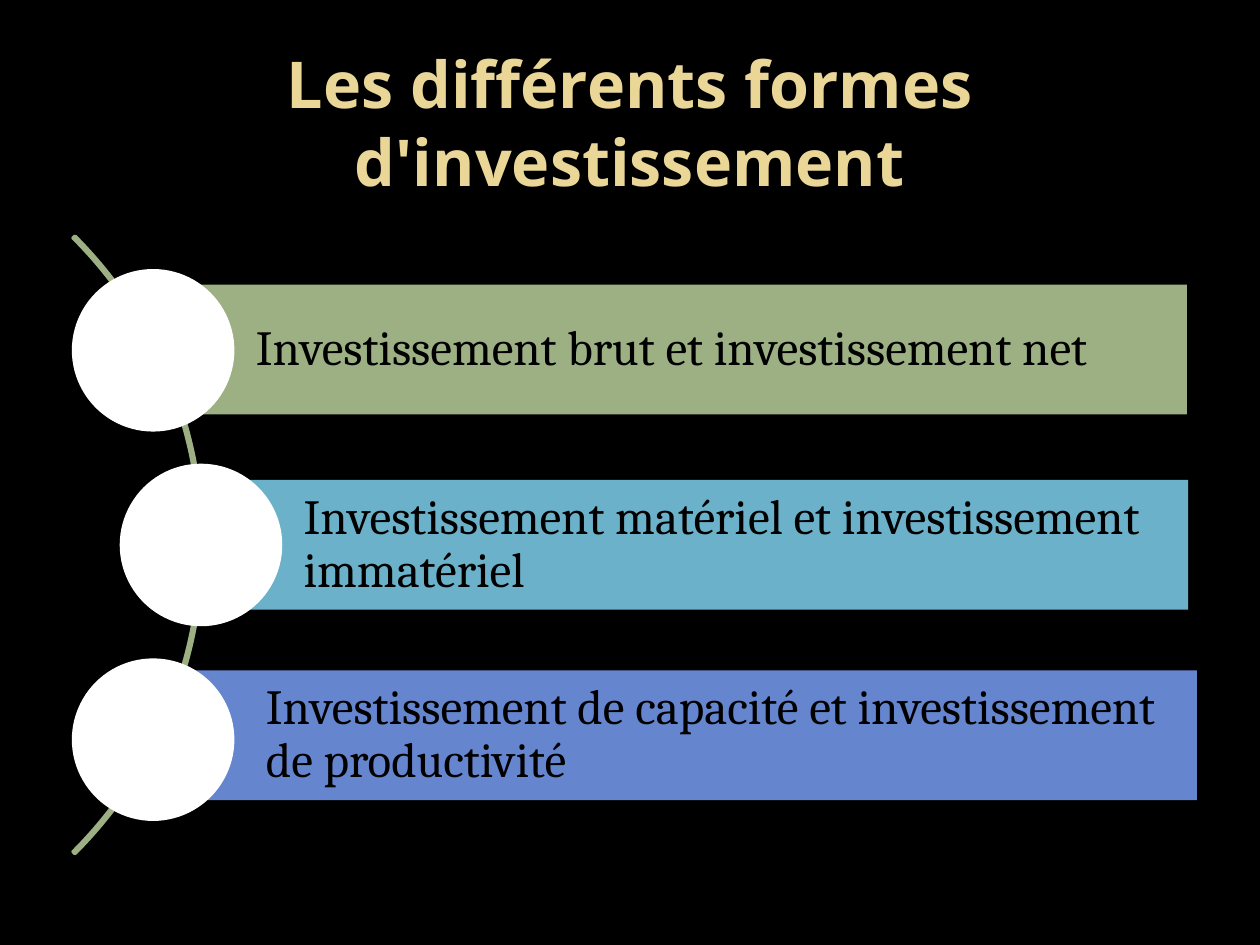
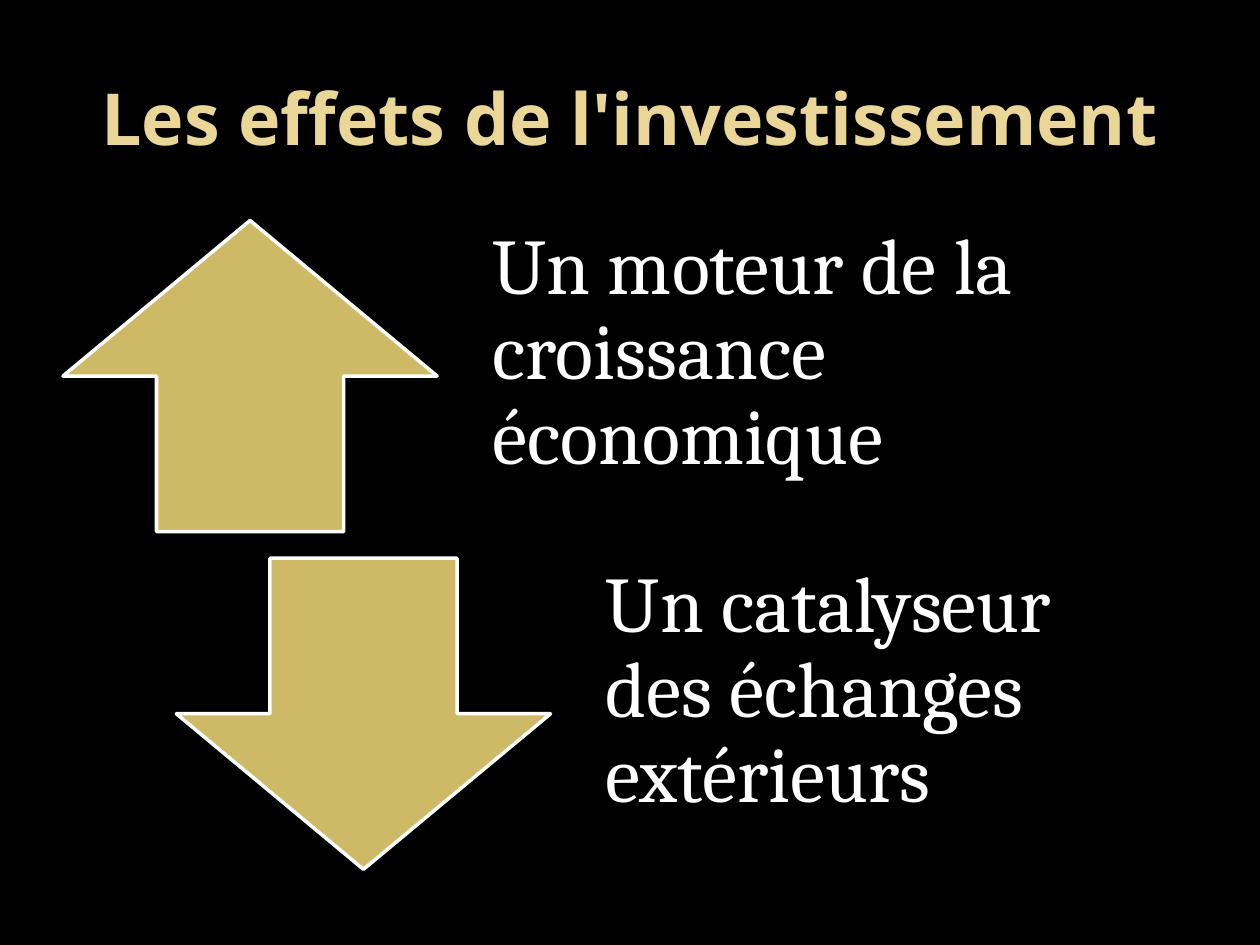
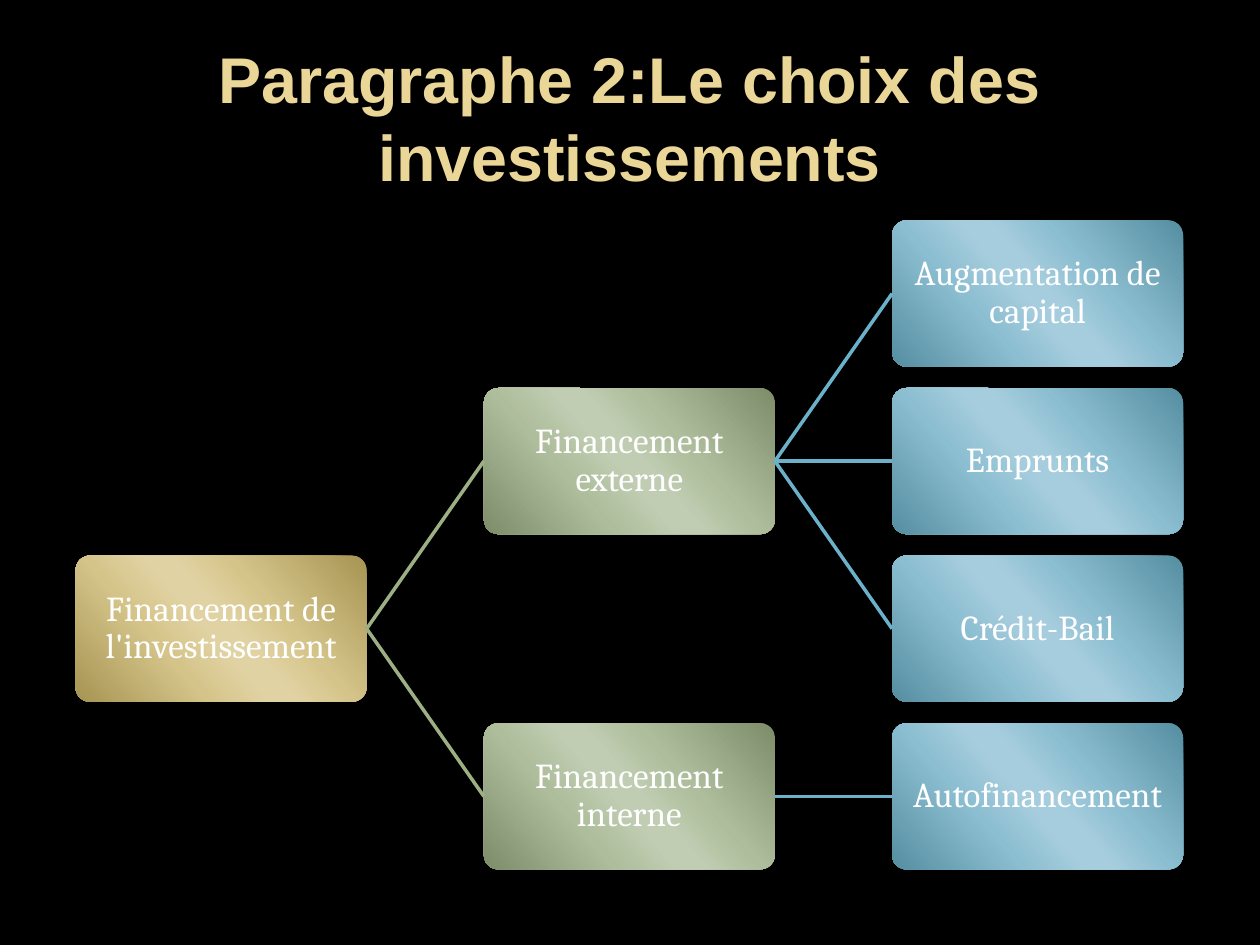
from pptx import Presentation
from pptx.dml.color import RGBColor
from pptx.enum.shapes import MSO_CONNECTOR, MSO_SHAPE
from pptx.enum.text import MSO_ANCHOR, PP_ALIGN
from pptx.oxml import parse_xml
from pptx.oxml.ns import nsdecls
from pptx.util import Inches, Pt

WIDE, HIGH = 10, 7.5
HUES = {
    "black": "000000", "white": "FFFFFF", "cream": "EAD696", "gold": "CEB966",
    "green": "9CB084", "teal": "6BB1C9", "blue": "6585CF",
}
GLOSS = {
    "gold": ("A59452", "D5C489", "E1D2A3"),
    "green": ("7D8D6A", "AEBD9C", "C0CDB2"),
    "teal": ("568EA1", "8CBED1", "A6CDDD"),
}
STOPS = ((0, 0), (33, 1), (47, 2), (53, 2), (68, 1), (100, 0))
SIDES = ("left", "top", "right", "bottom")
HEAD = {"left": 0.05 * WIDE, "width": 0.9 * WIDE, "height": HIGH / 6}
CELL = {"x": 0.6, "y": 1.75, "dx": 3.24, "dy": 1.33, "w": 2.31, "h": 1.16}


def tint(name):
    """Return the named colour."""
    return RGBColor.from_string(HUES[name])


def put(item, values):
    """Set each attribute in a dict of values."""
    for key, value in values.items():
        setattr(item, key, value)


def write(shape, text, size, hue, font="Cambria", pads=(0.1, 0.05, 0.1, 0.05),
          align=PP_ALIGN.LEFT, gap=0.9):
    """Fill a shape with one formatted paragraph."""
    frame = shape.text_frame
    frame.text = text
    put(frame, {"word_wrap": True, "vertical_anchor": MSO_ANCHOR.MIDDLE})
    put(frame, {f"margin_{side}": Inches(pad) for side, pad in zip(SIDES, pads)})
    line = frame.paragraphs[0]
    put(line, {"alignment": align, "line_spacing": gap})
    face = line.runs[0].font
    put(face, {"name": font, "size": Pt(size)})
    face.color.rgb = tint(hue)
    return face


def page(deck, text, size, font="Noto Sans", gap=1.0, top=0.3):
    """Add a slide with its title."""
    slide = deck.slides.add_slide(deck.slide_layouts[5])
    head = slide.shapes.title
    put(head, {key: Inches(value) for key, value in {**HEAD, "top": top}.items()})
    face = write(head, text, size, "cream", font, align=PP_ALIGN.CENTER, gap=gap)
    face.bold = True
    return slide


def draw(slide, kind, box, fill=None, edge=None):
    """Add a flat preset shape with an optional fill and outline."""
    shape = slide.shapes.add_shape(kind, *map(Inches, box))
    shape.shadow.inherit = False
    for part, hue in ((shape.fill, fill), (shape.line.fill, edge)):
        if hue:
            part.solid()
            part.fore_color.rgb = tint(hue)
        else:
            part.background()
    if edge:
        shape.line.width = Pt(2)
    return shape


def arc(slide):
    """Add the thin arc behind the bars."""
    shape = draw(slide, MSO_SHAPE.BLOCK_ARC, (-5.32, 0.86, 6.93, 6.93), edge="green")
    for spot, value in enumerate((189, 27, 0.003)):
        shape.adjustments[spot] = value


def bar(slide, text, hue, left, top, right, disc, mid):
    """Add a labelled bar with a white disc at its left end."""
    shape = draw(slide, MSO_SHAPE.RECTANGLE, (left, top, right - left, 1.03), hue)
    write(shape, text, 28, "black", pads=(0.82, 0.08, 0.08, 0.08))
    draw(slide, MSO_SHAPE.OVAL, (disc, mid - 0.645, 1.29, 1.29), "white")


def effect(slide, kind, text, left, top):
    """Add a large arrow with a statement beside it."""
    draw(slide, kind, (left, top, 2.97, 2.47), "gold", "white")
    note = slide.shapes.add_textbox(*map(Inches, (left + 3.06, top, 5.04, 2.47)))
    write(note, text, 45, "white", pads=(0.35, 0, 0.35, 0.35))


def shine(shape, hue):
    """Give a shape a glossy diagonal gradient."""
    stops = "".join(
        f'<a:gs pos="{spot * 1000}"><a:srgbClr val="{GLOSS[hue][tone]}"/></a:gs>'
        for spot, tone in STOPS)
    fill = parse_xml(
        f'<a:gradFill {nsdecls("a")} rotWithShape="1"><a:gsLst>{stops}</a:gsLst>'
        f'<a:lin ang="{139 * 60000}" scaled="1"/></a:gradFill>')
    old = shape.fill._xPr.find(
        "{http://schemas.openxmlformats.org/drawingml/2006/main}solidFill")
    old.getparent().replace(old, fill)


def node(slide, text, hue, col, row):
    """Add a tree box at a grid column and row."""
    box = (CELL["x"] + col * CELL["dx"], CELL["y"] + row * CELL["dy"],
           CELL["w"], CELL["h"])
    shape = draw(slide, MSO_SHAPE.ROUNDED_RECTANGLE, box, hue)
    shape.adjustments[0] = 0.1
    shine(shape, hue)
    write(shape, text, 20, "white", pads=(0.01,) * 4, align=PP_ALIGN.CENTER)
    return shape


def link(slide, start, end, hue):
    """Join the right side of one box to the left side of another."""
    line = slide.shapes.add_connector(MSO_CONNECTOR.STRAIGHT, 0, 0, 0, 0)
    line.begin_connect(start, 3)
    line.end_connect(end, 1)
    line.line.color.rgb = tint(hue)
    line.line.width = Pt(2)
    line._element.spPr.append(parse_xml(f'<a:effectLst {nsdecls("a")}/>'))


def tree(slide, branch, col=0, base=None):
    """Add a box and, joined to it, all its branches."""
    text, row, kids = branch
    hue = ("gold", "green", "teal")[col]
    shape = node(slide, text, hue, col, row)
    if base is not None:
        link(slide, base, shape, hue)
    for kid in kids:
        tree(slide, kid, col + 1, shape)


def main():
    """Build and save the slides."""
    deck = Presentation()
    put(deck, {"slide_width": Inches(WIDE), "slide_height": Inches(HIGH)})
    back = deck.slide_master.background.fill
    back.solid()
    back.fore_color.rgb = tint("black")

    forms = page(deck, "Les différents formes d'investissement", 36.9,
                 gap=Pt(44.5), top=0.34)
    arc(forms)
    bars = (
        ("Investissement brut et investissement net", "green", 1.21, 2.26, 9.42, 0.57),
        ("Investissement matériel et investissement immatériel", "teal",
         1.59, 3.81, 9.43, 0.95),
        ("Investissement de capacité et investissement de productivité", "blue",
         1.29, 5.32, 9.5, 0.57),
    )
    for row, item in enumerate(bars):
        bar(forms, *item, mid=2.78 + 1.545 * row)

    gains = page(deck, "Les effets de l'investissement", 41)
    effect(gains, MSO_SHAPE.UP_ARROW, "Un moteur de la croissance économique", 0.5, 1.75)
    effect(gains, MSO_SHAPE.DOWN_ARROW, "Un catalyseur des échanges extérieurs", 1.4, 4.43)

    funds = page(deck, "Paragraphe 2:Le choix des investissements", 36.9,
                 "Arial", Pt(44.5))
    tree(funds, ("Financement de l'investissement", 2, (
        ("Financement externe", 1, (
            ("Augmentation de capital", 0, ()),
            ("Emprunts", 1, ()),
            ("Crédit-Bail", 2, ()))),
        ("Financement interne", 3, (
            ("Autofinancement", 3, ()),)))))

    deck.save("out.pptx")


if __name__ == "__main__":
    main()
